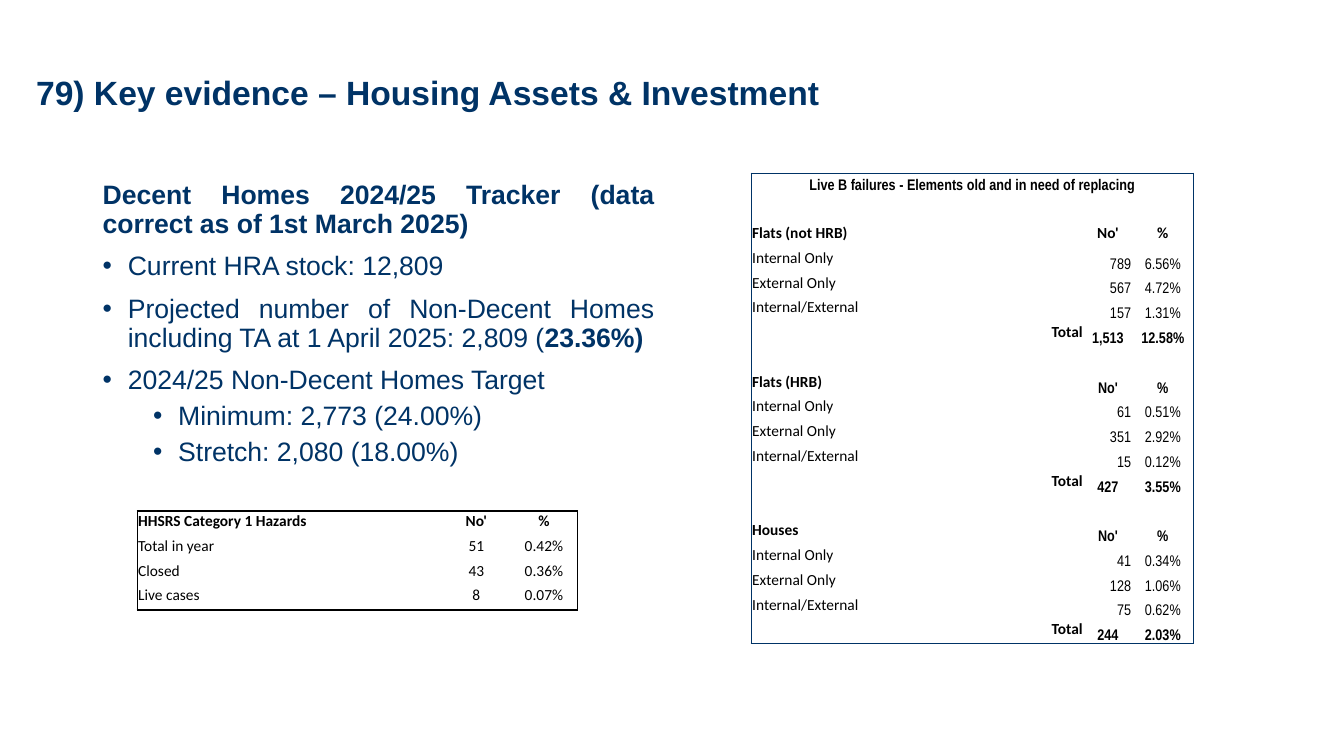
"""Build the slide of key evidence on housing assets and investment."""
from dataclasses import dataclass

from lxml import etree
from pptx import Presentation
from pptx.dml.color import RGBColor
from pptx.enum.text import MSO_ANCHOR, PP_ALIGN
from pptx.oxml.ns import qn
from pptx.util import Inches, Pt

LEFT, CENTER, RIGHT, JUSTIFY = PP_ALIGN.LEFT, PP_ALIGN.CENTER, PP_ALIGN.RIGHT, PP_ALIGN.JUSTIFY
TOP, MIDDLE, BOTTOM = MSO_ANCHOR.TOP, MSO_ANCHOR.MIDDLE, MSO_ANCHOR.BOTTOM
SLIDE_WIDTH, SLIDE_HEIGHT = Inches(13.33), Inches(7.5)


@dataclass(frozen=True)
class Theme:
    navy: str = "003366"
    black: str = "000000"
    heading_font: str = "Arial"
    label_font: str = "Calibri"
    figure_font: str = "Arial Narrow"
    title_size: int = 24
    body_size: int = 19
    table_size: int = 11


THEME = Theme()


@dataclass(frozen=True)
class Area:
    """Position and size in hundredths of the slide's width and height."""
    left: float
    top: float
    width: float
    height: float

    def box(self) -> tuple[int, int, int, int]:
        return columns(self.left), rows(self.top), columns(self.width), rows(self.height)


@dataclass(frozen=True)
class Line:
    text: str
    bold_text: str = ""
    level: int = 0
    bullet: bool = True


@dataclass(frozen=True)
class Entry:
    text: str = ""
    align: PP_ALIGN = LEFT
    bold: bool = False
    font: str = THEME.label_font
    bottom: float = 0.05
    anchor: MSO_ANCHOR = BOTTOM


@dataclass(frozen=True)
class Group:
    name: str
    counts: tuple[str, str, str, str]
    shares: tuple[str, str, str, str]


TITLE = "79) Key evidence – Housing Assets & Investment"
TITLE_AREA = Area(1.95, 5.6, 85.82, 13.73)
BODY_AREA = Area(6.9, 23.33, 42.53, 63.47)
FAILURES_AREA = Area(55.89, 22.93, 32.93, 62.3)
FAILURES_COLUMNS = (24.75, 3.6, 4.58)
HAZARDS_AREA = Area(10.2, 67.6, 32.79, 13.1)
HAZARDS_COLUMNS = (22.73, 5.03, 5.03)
FAILURES_TITLE = "Live B failures - Elements old and in need of replacing"

LINES = (
    Line("", "Decent Homes 2024/25 Tracker (data correct as of 1st March 2025)", bullet=False),
    Line("Current HRA stock: 12,809"),
    Line("Projected number of Non-Decent Homes including TA at 1 April 2025: 2,809 (", "23.36%)"),
    Line("2024/25 Non-Decent Homes Target"),
    Line("Minimum: 2,773 (24.00%)", level=1),
    Line("Stretch: 2,080 (18.00%)", level=1),
)
HAZARDS = (
    ("HHSRS Category 1 Hazards", "No'", "%"),
    ("Total in year", "51", "0.42%"),
    ("Closed", "43", "0.36%"),
    ("Live cases", "8", "0.07%"),
)
ELEMENTS = ("Internal Only", "External Only", "Internal/External", "Total")
GROUPS = (
    Group("Flats (not HRB)", ("789", "567", "157", "1,513"), ("6.56%", "4.72%", "1.31%", "12.58%")),
    Group("Flats (HRB)", ("61", "351", "15", "427"), ("0.51%", "2.92%", "0.12%", "3.55%")),
    Group("Houses", ("41", "128", "75", "244"), ("0.34%", "1.06%", "0.62%", "2.03%")),
)


def columns(count: float) -> int:
    return round(SLIDE_WIDTH * count / 100)


def rows(count: float) -> int:
    return round(SLIDE_HEIGHT * count / 100)


def style_font(font, name: str, size: int, color: str, bold: bool) -> None:
    font.name, font.size, font.bold = name, Pt(size), bold
    font.color.rgb = RGBColor.from_string(color)


def add_frame(slide, area: Area, anchor: MSO_ANCHOR):
    frame = slide.shapes.add_textbox(*area.box()).text_frame
    frame.word_wrap = True
    frame.vertical_anchor = anchor
    return frame


def add_title(slide) -> None:
    frame = add_frame(slide, TITLE_AREA, MIDDLE)
    frame.text = TITLE
    paragraph = frame.paragraphs[0]
    paragraph.line_spacing = 0.9
    style_font(paragraph.runs[0].font, THEME.heading_font, THEME.title_size, THEME.navy, True)


def add_bullet(paragraph, level: int) -> None:
    properties = paragraph._p.get_or_add_pPr()
    properties.set("marL", str(Inches(0.25 + 0.5 * level)))
    properties.set("indent", str(Inches(-0.25)))
    etree.SubElement(properties, qn("a:buFont")).set("typeface", THEME.heading_font)
    etree.SubElement(properties, qn("a:buChar")).set("char", "•")


def add_body(slide) -> None:
    frame = add_frame(slide, BODY_AREA, TOP)
    for index, line in enumerate(LINES):
        paragraph = frame.add_paragraph() if index else frame.paragraphs[0]
        if line.bullet:
            add_bullet(paragraph, line.level)
        paragraph.level = line.level
        paragraph.alignment = JUSTIFY
        paragraph.line_spacing = 0.9
        if index:
            paragraph.space_before = Pt(5 if line.level else 10)
        for text, bold in ((line.text, False), (line.bold_text, True)):
            if text:
                run = paragraph.add_run()
                run.text = text
                style_font(run.font, THEME.heading_font, THEME.body_size, THEME.navy, bold)


def set_borders(cell, edges: dict[str, bool], color: str) -> None:
    properties = cell._tc.get_or_add_tcPr()
    for index, (side, visible) in enumerate(edges.items()):
        border = etree.Element(qn(f"a:ln{side}"), w=str(Pt(1)))
        fill = etree.SubElement(border, qn("a:solidFill" if visible else "a:noFill"))
        if visible:
            etree.SubElement(fill, qn("a:srgbClr")).set("val", color)
        properties.insert(index, border)


def fill_cell(cell, entry: Entry) -> None:
    cell.fill.background()
    cell.margin_left = cell.margin_right = cell.margin_top = Inches(0.01)
    cell.margin_bottom = Inches(entry.bottom)
    cell.vertical_anchor = entry.anchor
    cell.text_frame.text = entry.text
    paragraph = cell.text_frame.paragraphs[0]
    paragraph.alignment = entry.align
    paragraph.font.size = Pt(THEME.table_size)
    for run in paragraph.runs:
        style_font(run.font, entry.font, THEME.table_size, THEME.black, entry.bold)


def add_grid(slide, area: Area, widths: tuple[float, ...], entries: list[list[Entry]], color: str):
    last_row, last_column = len(entries) - 1, len(widths) - 1
    table = slide.shapes.add_table(len(entries), len(widths), *area.box()).table
    table.first_row = table.horz_banding = False
    for column, width in zip(table.columns, widths):
        column.width = columns(width)
    for row_index, row in enumerate(entries):
        for column_index, entry in enumerate(row):
            cell = table.cell(row_index, column_index)
            fill_cell(cell, entry)
            edges = {"L": column_index == 0, "R": column_index == last_column,
                     "T": row_index == 0, "B": row_index == last_row}
            set_borders(cell, edges, color)
    return table


def failure_entries() -> list[list[Entry]]:
    entries = [[Entry(FAILURES_TITLE, CENTER, True, THEME.figure_font, 0, MIDDLE), Entry(), Entry()]]
    for index, group in enumerate(GROUPS):
        style = (THEME.figure_font, 0) if index else (THEME.label_font, 0.05)
        entries.append([Entry()] * 3)
        entries.append([Entry(group.name, bold=True)]
                       + [Entry(text, CENTER, True, *style) for text in ("No'", "%")])
        for element, count, share in zip(ELEMENTS, group.counts, group.shares):
            total = element == "Total"
            entries.append([Entry(element, RIGHT if total else LEFT, total),
                            Entry(count, CENTER if total else RIGHT, total, THEME.figure_font, 0),
                            Entry(share, CENTER, total, THEME.figure_font, 0)])
    return entries


def main() -> None:
    presentation = Presentation()
    presentation.slide_width, presentation.slide_height = SLIDE_WIDTH, SLIDE_HEIGHT
    slide = presentation.slides.add_slide(presentation.slide_layouts[6])
    add_body(slide)
    failures = add_grid(slide, FAILURES_AREA, FAILURES_COLUMNS, failure_entries(), THEME.navy)
    failures.cell(0, 0).merge(failures.cell(0, 2))
    set_borders(failures.cell(0, 0), {"L": True, "R": True, "T": True, "B": False}, THEME.navy)
    for side in failures.cell(0, 0)._tc.tcPr[4:8]:
        failures.cell(0, 0)._tc.tcPr.remove(side)
    add_title(slide)
    hazards = [[Entry(text, CENTER if column else LEFT, row == 0) for column, text in enumerate(texts)]
               for row, texts in enumerate(HAZARDS)]
    add_grid(slide, HAZARDS_AREA, HAZARDS_COLUMNS, hazards, THEME.black)
    presentation.save("out.pptx")


if __name__ == "__main__":
    main()
